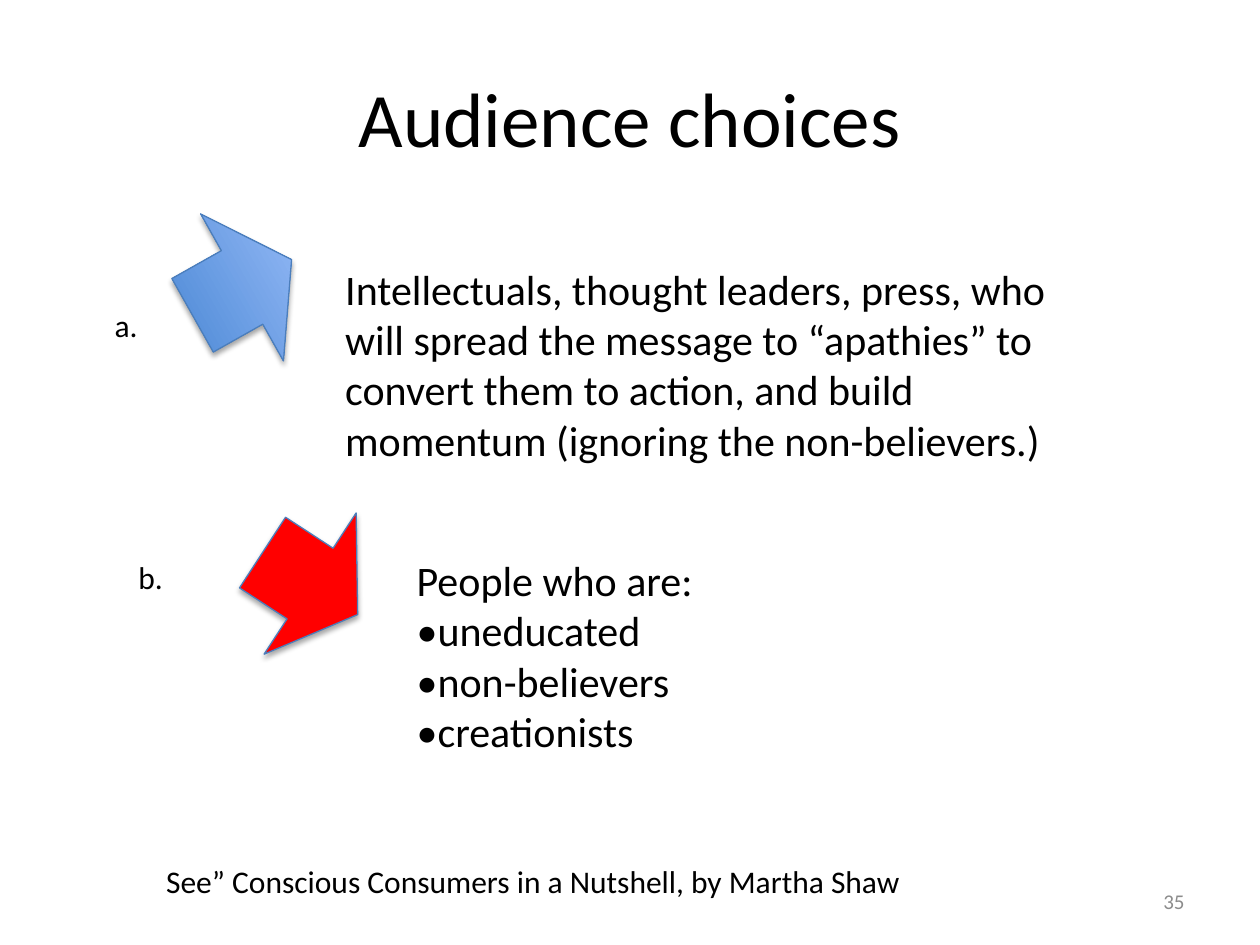
"""Build the "Audience choices" slide with two arrows and their audiences."""
import lxml.etree
import pptx
import pptx.dml.color
import pptx.enum.shapes
import pptx.enum.text
import pptx.oxml
import pptx.oxml.ns
import pptx.util

Cm = pptx.util.Cm
Pt = pptx.util.Pt
RGBColor = pptx.dml.color.RGBColor
Align = pptx.enum.text.PP_ALIGN
Anchor = pptx.enum.text.MSO_ANCHOR

FONT = "Calibri"
BLACK = RGBColor(0x00, 0x00, 0x00)
GREY = RGBColor(0x8C, 0x8C, 0x8C)
RED = RGBColor(0xFF, 0x00, 0x00)
OUTLINE = RGBColor(0x4B, 0x7E, 0xBC)
BLUES = (RGBColor(0x3F, 0x80, 0xCE), RGBColor(0xA4, 0xC4, 0xFF))

TITLE = "Audience choices"
TITLE_PLACE = (1.27, 0.76, 22.86, 3.18)
PAGE_NUMBER = "35"
PAGE_NUMBER_PLACE = (18.21, 17.65, 5.92, 1.02)

ARROW_SIZE = (3.4, 2.29)
ARROWS = [
    {"corner": (3.18, 4.65), "rotation": 60.6, "colors": BLUES},
    {"corner": (4.55, 10.62), "rotation": 123.1, "colors": (RED,)},
]

TEXTS = [
    {"lines": ["Intellectuals, thought leaders, press, who will spread the message to "
               "“apathies” to convert them to action, and build momentum "
               "(ignoring the non-believers.)"],
     "place": (6.71, 5.18, 15.62, 4.37), "size": 24, "wrap": True},
    {"lines": ["People who are:", "•uneducated", "•non-believers", "•creationists"],
     "place": (8.15, 11.05, 6.17, 4.37), "size": 24, "wrap": False},
    {"lines": ["a."], "place": (2.06, 6.05, 0.99, 1.02), "size": 18, "wrap": False},
    {"lines": ["b."], "place": (2.54, 11.13, 1.02, 1.02), "size": 18, "wrap": False},
    {"lines": ["See” Conscious Consumers in a Nutshell, by Martha Shaw"],
     "place": (3.1, 17.25, 15.47, 1.02), "size": 18, "wrap": False},
]


def write(box, lines, size, color=BLACK, align=Align.LEFT, anchor=Anchor.TOP):
    frame = box.text_frame
    frame.text = "\n".join(lines)
    frame.vertical_anchor = anchor
    for para in frame.paragraphs:
        para.alignment = align
        for span in para.runs:
            span.font.name = FONT
            span.font.size = Pt(size)
            span.font.color.rgb = color


def add_box(page, place):
    return page.shapes.add_textbox(*map(Cm, place))


def add_shadow(shape):
    shape.shadow.inherit = False
    effects = shape._element.spPr.find(pptx.oxml.ns.qn("a:effectLst"))
    effects.append(pptx.oxml.parse_xml(
        f'<a:outerShdw {pptx.oxml.ns.nsdecls("a")} blurRad="{Pt(3.1)}" dist="{Pt(1.8)}" '
        'dir="5400000" rotWithShape="0"><a:srgbClr val="000000">'
        '<a:alpha val="35000"/></a:srgbClr></a:outerShdw>'))


def add_arrow(page, corner, rotation, colors):
    arrow = page.shapes.add_shape(
        pptx.enum.shapes.MSO_SHAPE.UP_ARROW, *map(Cm, corner + ARROW_SIZE))
    arrow.rotation = rotation
    if len(colors) > 1:
        arrow.fill.gradient()
        arrow.fill.gradient_angle = 90
        for stop, color in zip(arrow.fill.gradient_stops, colors):
            stop.color.rgb = color
    else:
        arrow.fill.solid()
        arrow.fill.fore_color.rgb = colors[0]
    arrow.line.color.rgb = OUTLINE
    arrow.line.width = Pt(0.75)
    add_shadow(arrow)


def main():
    deck = pptx.Presentation()
    deck.slide_width, deck.slide_height = Cm(25.4), Cm(19.05)
    page = deck.slides.add_slide(deck.slide_layouts[5])

    title = page.shapes.title
    title.left, title.top, title.width, title.height = map(Cm, TITLE_PLACE)
    write(title, [TITLE], 44, align=Align.CENTER, anchor=Anchor.MIDDLE)

    number = add_box(page, PAGE_NUMBER_PLACE)
    write(number, [PAGE_NUMBER], 12, GREY, Align.RIGHT, Anchor.MIDDLE)
    number.text_frame.word_wrap = True

    for arrow in ARROWS:
        add_arrow(page, **arrow)

    for text in TEXTS:
        box = add_box(page, text["place"])
        write(box, text["lines"], text["size"])
        box.text_frame.word_wrap = text["wrap"]
        box.text_frame.auto_size = pptx.enum.text.MSO_AUTO_SIZE.SHAPE_TO_FIT_TEXT

    deck.save("out.pptx")


if __name__ == "__main__":
    main()
